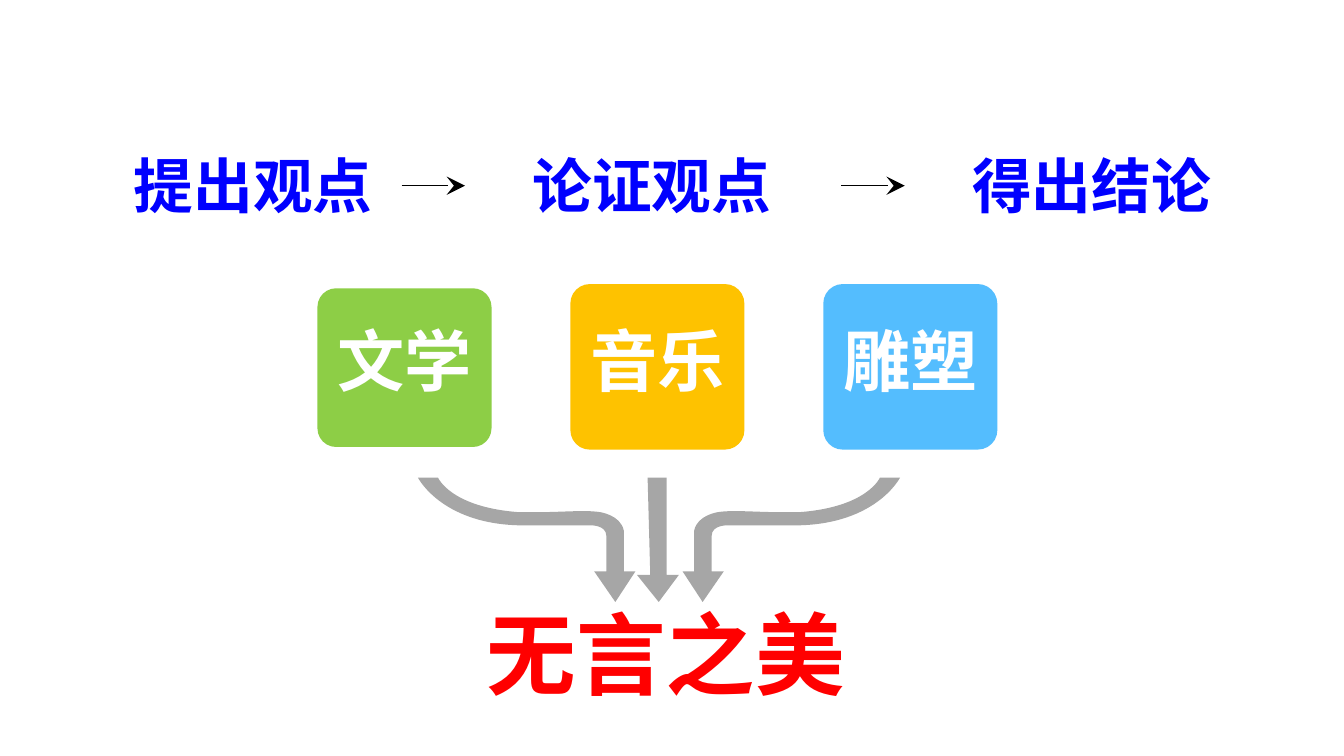
"""Build a slide showing how an argument runs from a claim to its conclusion."""
from dataclasses import dataclass

from lxml import etree
from pptx import Presentation
from pptx import util as u
from pptx.dml.color import RGBColor
from pptx.enum import shapes, text
from pptx.oxml import ns


@dataclass(frozen=True)
class Theme:
    font: str = "Noto Sans CJK SC"
    step: str = "0000FF"
    conclusion: str = "FF0000"
    card_text: str = "FFFFFF"
    green: str = "8DCE46"
    yellow: str = "FEC200"
    blue: str = "54BDFE"
    flow: str = "A6A6A6"
    line: str = "000000"
    step_size: int = 32
    card_size: int = 36
    conclusion_size: int = 48


THEME = Theme()
STEPS = [("提出观点", 2.24), ("论证观点", 9.78), ("得出结论", 18.09)]
CARDS = [
    ("文学", THEME.green, 5.45, 3.0),
    ("音乐", THEME.yellow, 5.37, 3.13),
    ("雕塑", THEME.blue, 5.37, 3.13),
]
MIRROR_SUM = 24.91
SIDE_FLOW = [
    (7.9, 9.03),
    (7.9, 9.03, 8.38, 9.98, 10.03, 9.93),
    (10.57, 9.93, 11.13, 9.93, 11.13, 9.93),
    (11.13, 9.93, 11.46, 9.91, 11.46, 10.13),
    (11.46, 10.46, 11.46, 10.8, 11.46, 10.8),
    (11.23, 10.8),
    (11.63, 11.38),
    (12.01, 10.8),
    (11.79, 10.8),
    (11.79, 10.8, 11.79, 10.41, 11.79, 10.03),
    (11.73, 9.73, 11.33, 9.68, 11.33, 9.68),
    (11.0, 9.63, 10.54, 9.7, 9.78, 9.68),
    (8.51, 9.58, 8.28, 9.03, 8.28, 9.03),
]
MIDDLE_FLOW = [
    (12.24, 9.03), (12.29, 10.87), (12.04, 10.87), (12.45, 11.38),
    (12.83, 10.87), (12.6, 10.87), (12.6, 9.03),
]


def paint(sp, color):
    """Give a shape a flat fill, or none, without line or shadow."""
    sp.shadow.inherit = False
    sp.line.fill.background()
    if color:
        sp.fill.solid()
        sp.fill.fore_color.rgb = RGBColor.from_string(color)
    else:
        sp.fill.background()


def write(tf, words, *, size, color, align=text.PP_ALIGN.CENTER, spacing=None, margins=None):
    """Write one bold, vertically centred paragraph into a text frame."""
    tf.word_wrap = True
    tf.vertical_anchor = text.MSO_ANCHOR.MIDDLE
    if margins is not None:
        tf.margin_left = tf.margin_right = tf.margin_top = tf.margin_bottom = margins
    p = tf.paragraphs[0]
    p.alignment = align
    p.line_spacing = spacing
    r = p.add_run()
    r.text = words
    r.font.size = u.Pt(size)
    r.font.bold = True
    r.font.name = THEME.font
    r.font.color.rgb = RGBColor.from_string(color)
    etree.SubElement(r.font._element, ns.qn("a:ea"), typeface=THEME.font)


def add_box(parent, left, top, width, height, words, *, fill=None, radius=0.064, **style):
    """Add a rounded box with text."""
    sp = parent.shapes.add_shape(
        shapes.MSO_SHAPE.ROUNDED_RECTANGLE,
        u.Cm(left), u.Cm(top), u.Cm(width), u.Cm(height),
    )
    sp.adjustments[0] = radius
    paint(sp, fill)
    write(sp.text_frame, words, **style)


def add_arrow(parent, left, right, y):
    """Add a thin horizontal arrow between two steps."""
    line = parent.shapes.add_connector(
        shapes.MSO_CONNECTOR.STRAIGHT, u.Cm(left), u.Cm(y), u.Cm(right), u.Cm(y)
    )
    line.line.width = u.Pt(0.5)
    line.line.color.rgb = RGBColor.from_string(THEME.line)
    etree.SubElement(
        line.line._get_or_add_ln(), ns.qn("a:tailEnd"), type="stealth", w="lg", len="lg"
    )
    etree.SubElement(line._element.spPr, ns.qn("a:effectLst"))


def add_flow(parent, outline):
    """Add a solid arrow whose six-number segments are cubic curves."""
    start, *ends = [(u.Cm(segment[-2]), u.Cm(segment[-1])) for segment in outline]
    builder = parent.shapes.build_freeform(*start)
    builder.add_line_segments(ends, close=True)
    sp = builder.convert_to_shape()
    paint(sp, THEME.flow)
    lines = list(sp._element.iter(ns.qn("a:lnTo")))
    for line, segment in zip(lines, outline[1:]):
        if len(segment) == 6:
            curve = etree.Element(ns.qn("a:cubicBezTo"))
            for x, y in zip(segment[::2], segment[1::2]):
                etree.SubElement(curve, ns.qn("a:pt"), x=str(u.Cm(x) - sp.left),
                                 y=str(u.Cm(y) - sp.top))
            line.getparent().replace(line, curve)


def mirror(outline):
    """Flip an outline from left to right."""
    return [
        tuple(round(MIRROR_SUM - n, 2) if i % 2 == 0 else n for i, n in enumerate(segment))
        for segment in outline
    ]


def main():
    """Build and save the slide."""
    prs = Presentation()
    prs.slide_width, prs.slide_height = u.Cm(25.4), u.Cm(14.29)
    s = prs.slides.add_slide(prs.slide_layouts[6])

    for i, (words, color, top, height) in enumerate(CARDS):
        add_box(s, 6 + i * 4.78, top, 3.29, height, words, fill=color, radius=0.118,
                size=THEME.card_size, color=THEME.card_text, spacing=0.8, margins=0)

    summary = s.shapes.add_group_shape()
    for outline in (SIDE_FLOW, MIDDLE_FLOW, mirror(SIDE_FLOW)):
        add_flow(summary, outline)
    add_box(summary, 8.71, 11.39, 7.75, 1.9, "无言之美",
            size=THEME.conclusion_size, color=THEME.conclusion)

    process = s.shapes.add_group_shape()
    for i, (words, left) in enumerate(STEPS):
        if i:
            add_arrow(process, left - 2.19, left - 0.99, 3.51)
        add_box(process, left, 2.55, 5.36, 1.9, words, size=THEME.step_size,
                color=THEME.step, align=text.PP_ALIGN.LEFT)

    prs.save("out.pptx")


if __name__ == "__main__":
    main()
